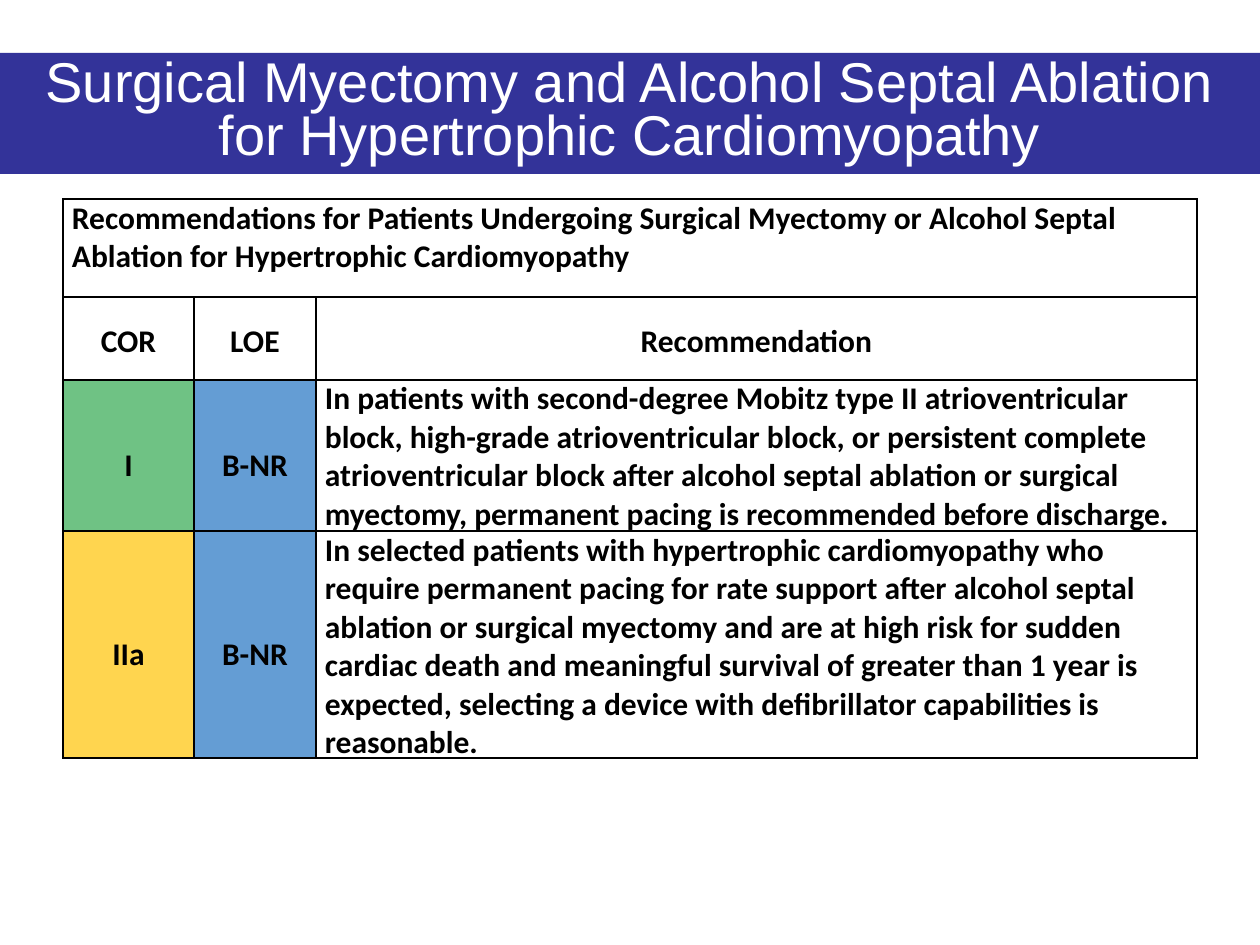
"""Build a slide of pacing recommendations after septal reduction."""
from dataclasses import dataclass

from lxml import etree
from pptx import Presentation
from pptx.dml.color import RGBColor
from pptx.enum.shapes import MSO_SHAPE
from pptx.enum.text import MSO_ANCHOR, MSO_AUTO_SIZE, PP_ALIGN
from pptx.oxml.ns import qn
from pptx.util import Emu, Pt

RECT = MSO_SHAPE.RECTANGLE
TOP, MIDDLE = MSO_ANCHOR.TOP, MSO_ANCHOR.MIDDLE
LEFT, CENTER = PP_ALIGN.LEFT, PP_ALIGN.CENTER
GROW = MSO_AUTO_SIZE.SHAPE_TO_FIT_TEXT

TITLE = "Surgical Myectomy and Alcohol Septal Ablation for Hypertrophic Cardiomyopathy"
HEADING = ("Recommendations for Patients Undergoing Surgical Myectomy or "
           "Alcohol Septal Ablation for Hypertrophic Cardiomyopathy")
LABELS = ("COR", "LOE", "Recommendation")
ADVICE = [
    ("I", "B-NR",
     "In patients with second-degree Mobitz type II atrioventricular block, "
     "high-grade atrioventricular block, or persistent complete atrioventricular "
     "block after alcohol septal ablation or surgical myectomy, permanent pacing "
     "is recommended before discharge."),
    ("IIa", "B-NR",
     "In selected patients with hypertrophic cardiomyopathy who require permanent "
     "pacing for rate support after alcohol septal ablation or surgical myectomy "
     "and are at high risk for sudden cardiac death and meaningful survival of "
     "greater than 1 year is expected, selecting a device with defibrillator "
     "capabilities is reasonable."),
]
WIDTHS = (131, 122, 881)
HEIGHTS = (98, 83, 151, 227)


@dataclass(frozen=True)
class Theme:
    """Colours, fonts and sizes."""
    banner: str = "333399"
    white: str = "FFFFFF"
    black: str = "000000"
    head: str = "Arial"
    body: str = "Calibri"
    large: int = 32
    small: int = 18


THEME = Theme()
GRADES = {"I": "6FC284", "IIa": "FFD54F", "B-NR": "649DD4"}


def px(count):
    return Emu(round(count * 914400 / 126))


def write(frame, text, font, size, color, align, space, bold=False):
    para = frame.paragraphs[0]
    para.alignment = align
    para.line_spacing = space
    run = para.add_run()
    run.text = text
    run.font.name = font
    run.font.size = Pt(size)
    run.font.bold = bold
    run.font.color.rgb = RGBColor.from_string(color)


def border(cell):
    props = cell._tc.get_or_add_tcPr()
    for spot, side in enumerate(("a:lnL", "a:lnR", "a:lnT", "a:lnB")):
        line = etree.Element(qn(side), w=str(Pt(1)))
        fill = etree.SubElement(line, qn("a:solidFill"))
        etree.SubElement(fill, qn("a:srgbClr"), val=THEME.black)
        props.insert(spot, line)


def fill_cell(cell, text, align, space):
    cell.margin_left = cell.margin_right = px(9)
    cell.margin_top = cell.margin_bottom = 0
    cell.vertical_anchor = MIDDLE if align == CENTER else TOP
    write(cell.text_frame, text, THEME.body, THEME.small, THEME.black,
          align, space, True)
    if text in GRADES:
        cell.fill.solid()
        cell.fill.fore_color.rgb = RGBColor.from_string(GRADES[text])


def add_title(slide):
    bar = slide.shapes.add_shape(RECT, 0, px(53), px(1260), px(121))
    bar.shadow.inherit = False
    bar.fill.solid()
    bar.fill.fore_color.rgb = RGBColor.from_string(THEME.banner)
    bar.line.fill.background()
    frame = bar.text_frame
    frame.word_wrap = True
    frame.auto_size = GROW
    frame.vertical_anchor = TOP
    write(frame, TITLE, THEME.head, THEME.large, THEME.white, CENTER, 0.8)


def add_grid(slide):
    grid = slide.shapes.add_table(len(HEIGHTS), len(WIDTHS), px(63), px(199),
                                  px(sum(WIDTHS)), px(sum(HEIGHTS))).table
    grid.first_row = grid.horz_banding = False
    for col, width in zip(grid.columns, WIDTHS):
        col.width = px(width)
    for row, height in zip(grid.rows, HEIGHTS):
        row.height = px(height)
    for cell in grid.iter_cells():
        cell.fill.background()
        border(cell)
    grid.cell(0, 0).merge(grid.cell(0, len(WIDTHS) - 1))
    fill_cell(grid.cell(0, 0), HEADING, LEFT, 1.0)
    for col, label in enumerate(LABELS):
        fill_cell(grid.cell(1, col), label, CENTER, 1.15)
    for row, (grade, level, advice) in enumerate(ADVICE, 2):
        fill_cell(grid.cell(row, 0), grade, CENTER, 1.5)
        fill_cell(grid.cell(row, 1), level, CENTER, 1.5)
        fill_cell(grid.cell(row, 2), advice, LEFT, 1.0)


def main():
    deck = Presentation()
    deck.slide_width, deck.slide_height = px(1260), px(945)
    slide = deck.slides.add_slide(deck.slide_layouts[6])
    add_title(slide)
    add_grid(slide)
    deck.save("out.pptx")


if __name__ == "__main__":
    main()
